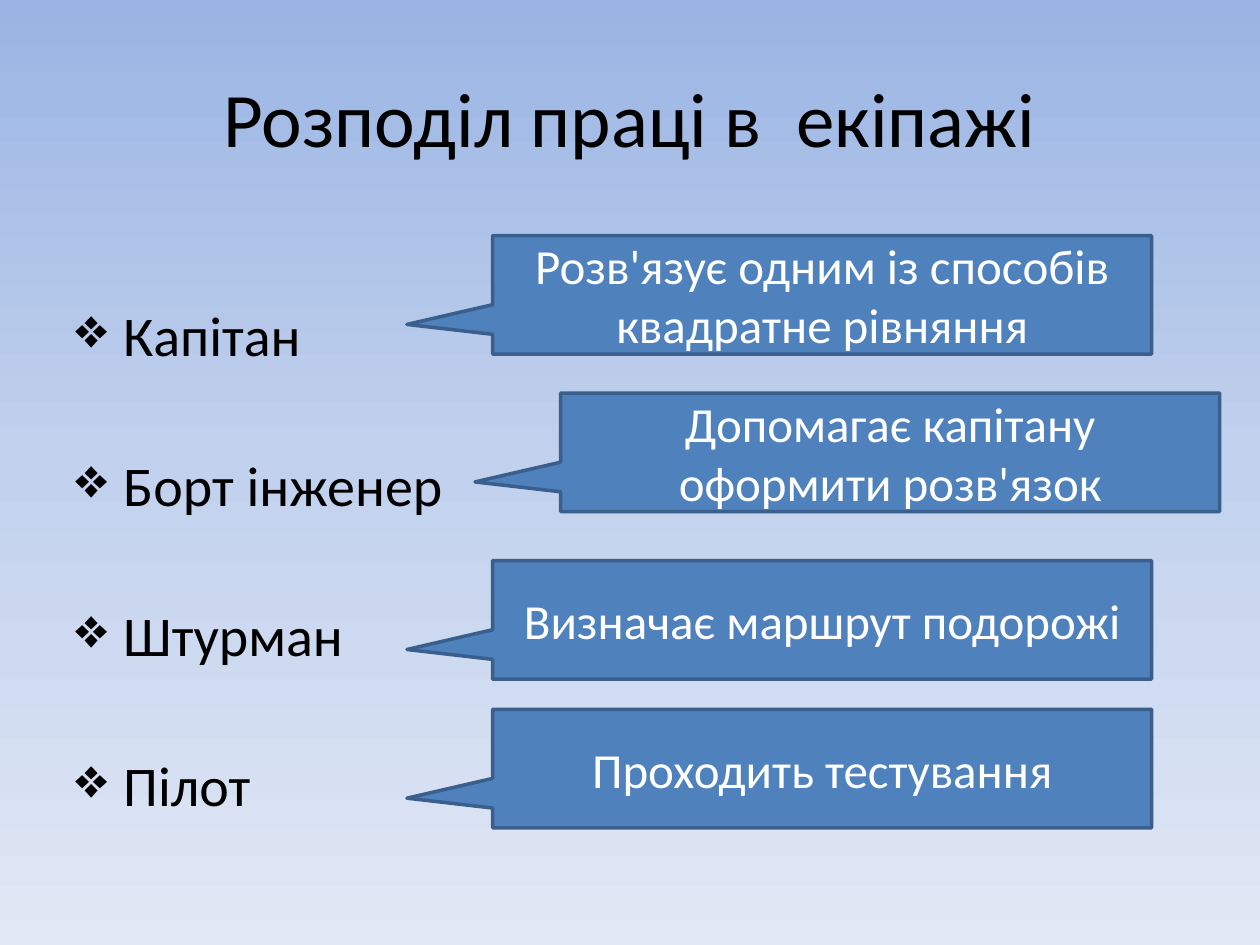
from copy import deepcopy

from pptx import Presentation
from pptx.dml.color import RGBColor
from pptx.enum.shapes import MSO_SHAPE as Shape
from pptx.enum.text import MSO_ANCHOR as Anchor, PP_ALIGN as Align
from pptx.oxml.ns import qn
from pptx.util import Inches, Pt
from lxml.etree import SubElement

TITLE = "Розподіл праці в  екіпажі"
ROLES = ["Капітан", "Борт інженер", "Штурман", "Пілот"]
CALLOUT_LEFT = 3.91
DUTIES = [
    (CALLOUT_LEFT, 1.87, "Розв'язує одним із способів квадратне рівняння"),
    (4.45, 3.12, "Допомагає капітану оформити розв'язок"),
    (CALLOUT_LEFT, 4.45, "Визначає маршрут подорожі"),
    (CALLOUT_LEFT, 5.63, "Проходить тестування"),
]
BACKGROUND = [(0, "9AB5E4"), (0.5, "C2D1ED"), (1, "E1E8F5")]


def color(value):
    return RGBColor.from_string(value)


def write(paragraph, text, size, hex_color, **formats):
    for name, value in formats.items():
        setattr(paragraph, name, value)
    run = paragraph.add_run()
    run.text = text
    for name, value in {"name": "Calibri", "size": Pt(size)}.items():
        setattr(run.font, name, value)
    run.font.color.rgb = color(hex_color)


def paint_background(slide):
    fill = slide.background.fill
    fill.gradient()
    fill.gradient_angle = 270
    stop_list = next(slide.element.iter(qn("a:gsLst")))
    stop_list.insert(1, deepcopy(stop_list[0]))
    for stop, (position, shade) in zip(fill.gradient_stops, BACKGROUND):
        stop.position = position
        stop.color.rgb = color(shade)


def add_text_frame(slide, left, top, width, height):
    frame = slide.shapes.add_textbox(
        Inches(left), Inches(top), Inches(width), Inches(height)).text_frame
    frame.word_wrap = True
    return frame


def add_title(slide, left, top, width, height):
    frame = add_text_frame(slide, left, top, width, height)
    frame.vertical_anchor = Anchor.MIDDLE
    write(frame.paragraphs[0], TITLE, 44, "000000", alignment=Align.CENTER)


def add_roles(slide, left, top, width, height):
    frame = add_text_frame(slide, left, top, width, height)
    for index, role in enumerate(ROLES):
        paragraph = frame.add_paragraph() if index else frame.paragraphs[0]
        properties = paragraph._p.get_or_add_pPr()
        properties.set("marL", str(Inches(0.38)))
        properties.set("indent", str(-Inches(0.38)))
        SubElement(properties, qn("a:buChar")).set("char", "❖")
        write(paragraph, role, 32, "000000", line_spacing=2.1,
              space_before=Pt(5 if index else 0))


def add_duty(slide, left, top, width, height, duty):
    callout = slide.shapes.add_shape(
        Shape.RECTANGULAR_CALLOUT,
        Inches(left), Inches(top), Inches(width), Inches(height))
    callout.adjustments[0] = -0.63
    callout.adjustments[1] = 0.25
    callout.shadow.inherit = False
    callout.fill.solid()
    callout.fill.fore_color.rgb = color("4F81BD")
    callout.line.color.rgb = color("3A5F8C")
    callout.line.width = Pt(2)
    frame = callout.text_frame
    frame.word_wrap = True
    frame.vertical_anchor = Anchor.MIDDLE
    write(frame.paragraphs[0], duty, 28, "FFFFFF", alignment=Align.CENTER)


def main():
    deck = Presentation()
    deck.slide_width, deck.slide_height = Inches(10), Inches(7.5)
    slide = deck.slides.add_slide(deck.slide_layouts[6])
    paint_background(slide)
    add_title(slide, 0.5, 0.3, 9, 1.25)
    add_roles(slide, 0.5, 1.75, 9, 4.95)
    for left, top, duty in DUTIES:
        add_duty(slide, left, top, 5.23, 0.94, duty)
    deck.save("out.pptx")


if __name__ == "__main__":
    main()
